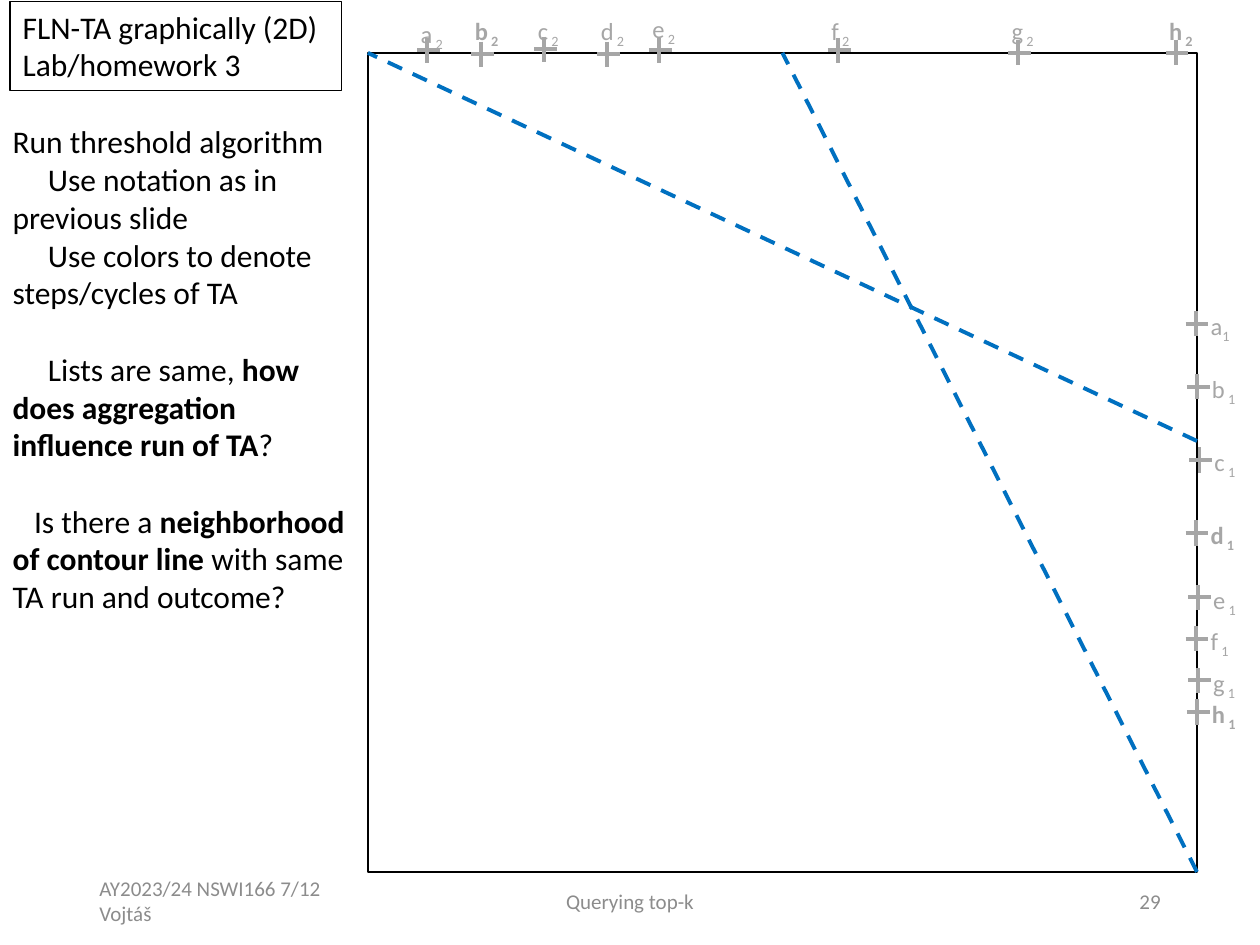
from pptx import Presentation
from pptx import util as u
from pptx.dml.color import RGBColor
from pptx.enum import dml, shapes, text
from pptx.oxml.ns import qn
from lxml import etree
from dataclasses import dataclass


@dataclass(frozen=True)
class Theme:
    font: str = "Calibri"
    ink: RGBColor = RGBColor(0, 0, 0)
    contour: RGBColor = RGBColor(0x00, 0x70, 0xC0)
    tick: RGBColor = RGBColor(0xA6, 0xA6, 0xA6)
    footer: RGBColor = RGBColor(0x8C, 0x8C, 0x8C)
    body_size: int = 18
    tick_size: int = 14
    footer_size: int = 12


theme = Theme()
prs = Presentation()
prs.slide_width, prs.slide_height = u.Inches(10), u.Inches(7.5)
slide = prs.slides.add_slide(prs.slide_layouts[1])


def style(paragraph, size, color, align=text.PP_ALIGN.LEFT):
    paragraph.alignment = align
    paragraph.font.name = theme.font
    paragraph.font.size = u.Pt(size)
    paragraph.font.color.rgb = color


def add_line(start, end, color, dash=None):
    line = slide.shapes.add_connector(
        shapes.MSO_CONNECTOR.STRAIGHT, *[u.Inches(v) for v in (*start, *end)])
    line.line.color.rgb = color
    line.line.width = u.Pt(2.25)
    if dash:
        line.line.dash_style = dash
    etree.SubElement(line._element.spPr, qn("a:effectLst"))


# Footer: date, subject and page number
for left, width, words, align in [
    (0.69, 2.25, "AY2023/24 NSWI166 7/12 Vojtáš", text.PP_ALIGN.LEFT),
    (3.31, 3.38, "Querying top-k", text.PP_ALIGN.CENTER),
    (7.06, 2.25, "29", text.PP_ALIGN.RIGHT),
]:
    footer = slide.shapes.add_textbox(
        u.Inches(left), u.Inches(6.95), u.Inches(width), u.Inches(0.4)).text_frame
    footer.word_wrap = True
    footer.vertical_anchor = text.MSO_ANCHOR.MIDDLE
    footer.text = words
    style(footer.paragraphs[0], theme.footer_size, theme.footer, align)

# Preference square
x0, y0, x1, y1 = 2.92, 0.42, 9.5, 6.92
square = slide.shapes.add_shape(
    shapes.MSO_SHAPE.RECTANGLE, u.Inches(x0), u.Inches(y0),
    u.Inches(x1 - x0), u.Inches(y1 - y0))
square.shadow.inherit = False
square.fill.background()
square.line.color.rgb = theme.ink
square.line.width = u.Pt(1)

# Contour lines
for start, end in [((x1, y1), (6.21, y0)), ((x1, 3.5), (x0, y0))]:
    add_line(start, end, theme.contour, dml.MSO_LINE.DASH)

# Object marks: letter, cross centre, label corner, subscript, bold
label_widths = dict(a=0.39, b=0.41, c=0.38, d=0.4, e=0.4, f=0.36, g=0.39, h=0.4)
top_marks = [
    ("a", 3.39, 0.4, 0.1), ("b", 3.82, 0.43, 0.08), ("c", 4.32, 0.39, 0.08),
    ("d", 4.82, 0.43, 0.08), ("e", 5.23, 0.4, 0.06), ("f", 6.65, 0.4, 0.08),
    ("g", 8.08, 0.42, 0.08), ("h", 9.33, 0.42, 0.08),
]
right_marks = [
    ("a", 9.49, 2.57), ("b", 9.5, 3.07), ("c", 9.52, 3.65), ("d", 9.49, 4.23),
    ("e", 9.51, 4.74), ("f", 9.49, 5.07), ("g", 9.51, 5.4), ("h", 9.5, 5.65),
]
marks = [(n, x, y, x - 0.15, top, " 2", n in "bh") for n, x, y, top in top_marks]
marks += [(n, x, y, x + 0.02, y - 0.15, "1" if n == "a" else " 1", n in "dh")
          for n, x, y in right_marks]
for letter, x, y, left, top, index, bold in marks:
    add_line((x, y - 0.1), (x, y + 0.1), theme.tick)
    add_line((x - 0.08, y), (x + 0.1, y), theme.tick)
    label = slide.shapes.add_textbox(
        u.Inches(left), u.Inches(top),
        u.Inches(label_widths[letter]), u.Inches(0.34)).text_frame
    label.word_wrap = False
    name = label.paragraphs[0]
    style(name, theme.tick_size, theme.tick)
    name.font.bold = bold
    name.add_run().text = letter
    subscript = name.add_run()
    subscript.text = index
    subscript._r.get_or_add_rPr().set("baseline", "-25000")

# Title
title = slide.shapes.title
title.left, title.top = u.Inches(0.08), u.Inches(0.01)
title.width, title.height = u.Inches(2.63), u.Inches(0.71)
title.line.color.rgb = theme.ink
title.line.width = u.Pt(0.75)
heading = title.text_frame
heading.text = "FLN-TA graphically (2D)\nLab/homework 3"
heading.word_wrap = False
heading.auto_size = text.MSO_AUTO_SIZE.NONE
heading.vertical_anchor = text.MSO_ANCHOR.TOP
for paragraph in heading.paragraphs:
    style(paragraph, theme.body_size, theme.ink)

# Tasks: first-line indent, space before in points, (words, bold) runs
tasks = [
    (0, 0, [("Run threshold algorithm", False)]),
    (0.28, 0, [("Use notation as in previous slide", False)]),
    (0.28, 0, [("Use colors to denote steps/cycles of TA", False)]),
    (0.28, 22, [("Lists are same, ", False),
                ("how does aggregation influence run of TA", True), ("?", False)]),
    (0.17, 22, [("Is there a ", False), ("neighborhood", True)]),
    (0, 0, [("of contour line", True),
            (" with same TA run and outcome?", False)]),
]
body = slide.placeholders[1]
body.left, body.top = u.Inches(0), u.Inches(0.92)
body.width, body.height = u.Inches(2.86), u.Inches(4.04)
task_frame = body.text_frame
task_frame.auto_size = text.MSO_AUTO_SIZE.NONE
for number, (indent, gap, runs) in enumerate(tasks):
    task = task_frame.add_paragraph() if number else task_frame.paragraphs[0]
    style(task, theme.body_size, theme.ink)
    task.space_before = u.Pt(gap)
    properties = task._p.get_or_add_pPr()
    properties.set("marL", "0")
    properties.set("indent", str(u.Inches(indent)))
    properties.insert_element_before(
        properties.makeelement(qn("a:buNone")), "a:tabLst", "a:defRPr", "a:extLst")
    for words, bold in runs:
        run = task.add_run()
        run.text = words
        run.font.bold = bold

prs.save("out.pptx")
